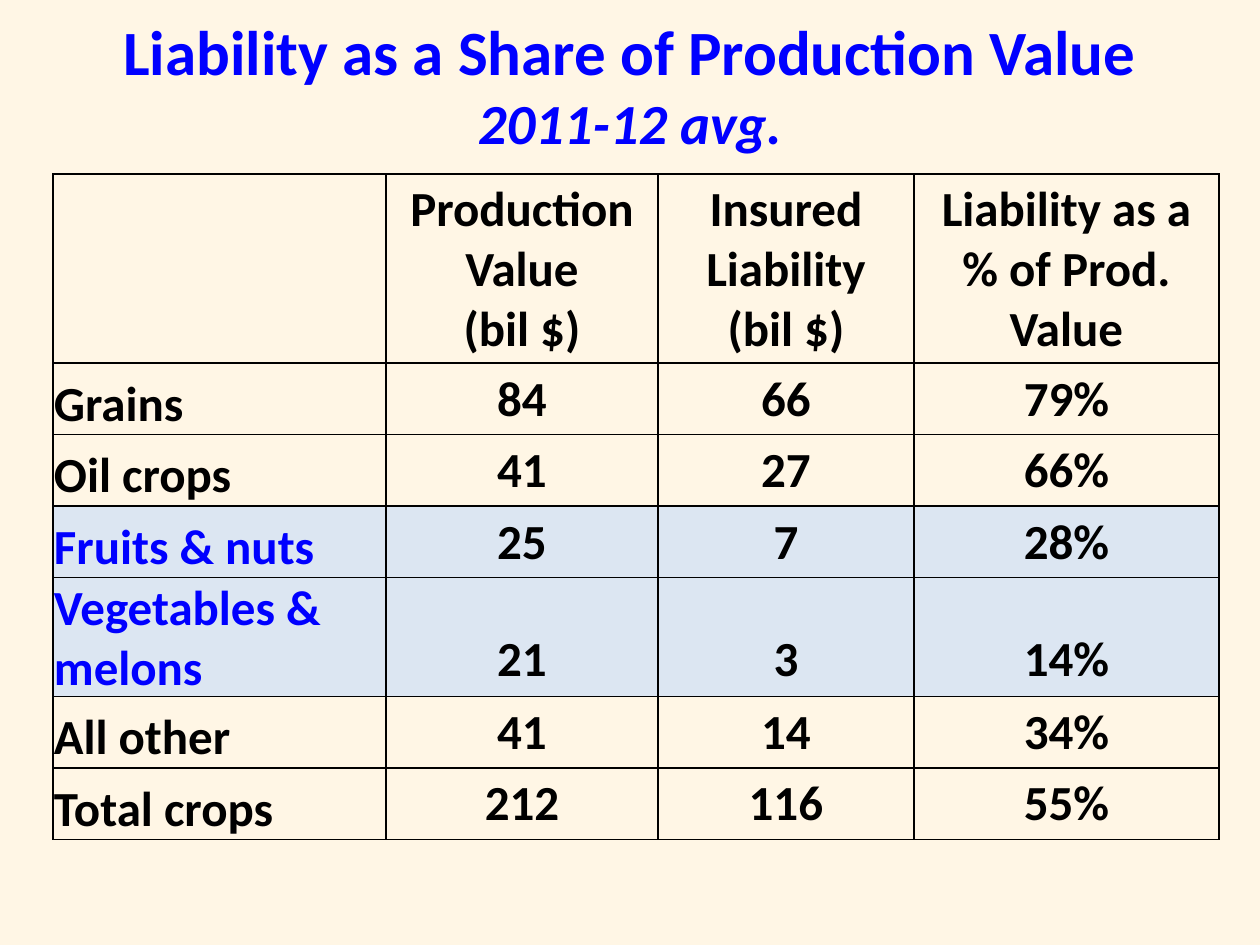
from pptx import Presentation
from pptx import util as u
from pptx.dml.color import RGBColor
from pptx.enum import text
from pptx.oxml import parse_xml
from pptx.oxml.ns import nsdecls

BLUE = RGBColor(0x00, 0x00, 0xFF)
BLACK = RGBColor(0x00, 0x00, 0x00)
CREAM = RGBColor(0xFF, 0xF6, 0xE5)
PALE_BLUE = RGBColor(0xDC, 0xE6, 0xF2)

COLUMNS = [333, 272, 256, 305]
HEADER_HEIGHT, ROW_HEIGHT, TALL_HEIGHT = 164, 63, 102
HEADER = ["", "Production Value\n(bil $)", "Insured\nLiability (bil $)",
          "Liability as a % of Prod. Value"]
CROPS = [
    ["Grains", "84", "66", "79%"],
    ["Oil crops", "41", "27", "66%"],
    ["Fruits & nuts", "25", "7", "28%"],
    ["Vegetables & melons", "21", "3", "14%"],
    ["All other", "41", "14", "34%"],
    ["Total crops", "212", "116", "55%"],
]
HIGHLIGHTED = {"Fruits & nuts", "Vegetables & melons"}
TALL = {"Vegetables & melons"}


def px(n):
    return u.Emu(round(n * 914400 / 126))


def add_run(p, words, color, **font):
    r = p.add_run()
    r.text = words
    r.font.color.rgb = color
    for name, value in {"name": "Calibri", "bold": True, **font}.items():
        setattr(r.font, name, value)


def add_title(s):
    tf = s.shapes.add_textbox(px(63), px(21), px(1134), px(126)).text_frame
    tf.word_wrap = True
    tf.vertical_anchor = text.MSO_ANCHOR.MIDDLE
    p = tf.paragraphs[0]
    p.alignment = text.PP_ALIGN.CENTER
    add_run(p, "Liability as a Share of Production Value ", BLUE, size=u.Pt(36))
    add_run(p, "2011-12 avg.", BLUE, size=u.Pt(32.4), italic=True)


def set_borders(cell):
    # Borders come before the fill in the cell properties
    tc_pr = cell._tc.get_or_add_tcPr()
    for i, side in enumerate(("lnL", "lnR", "lnT", "lnB")):
        tc_pr.insert(i, parse_xml(
            f'<a:{side} {nsdecls("a")} w="12700"><a:solidFill>'
            f'<a:srgbClr val="{BLACK}"/></a:solidFill></a:{side}>'))


def fill_cell(cell, words, is_label, highlighted):
    cell.vertical_anchor = text.MSO_ANCHOR.BOTTOM
    if is_label:
        margins = {"margin_left": 1, "margin_right": 1,
                   "margin_top": 1, "margin_bottom": 0}
        for name, value in margins.items():
            setattr(cell, name, px(value))
    if highlighted:
        cell.fill.solid()
        cell.fill.fore_color.rgb = PALE_BLUE
    else:
        cell.fill.background()
    set_borders(cell)
    if not words:
        return
    tf = cell.text_frame
    for i, line in enumerate(words.split("\n")):
        p = tf.add_paragraph() if i else tf.paragraphs[0]
        p.alignment = text.PP_ALIGN.LEFT if is_label else text.PP_ALIGN.CENTER
        color = BLUE if is_label and highlighted else BLACK
        add_run(p, line, color, size=u.Pt(28))


def add_crop_table(s):
    rows = [HEADER] + CROPS
    heights = [HEADER_HEIGHT] + [
        TALL_HEIGHT if crop[0] in TALL else ROW_HEIGHT for crop in CROPS]
    table = s.shapes.add_table(len(rows), len(COLUMNS), px(53), px(174),
                               px(sum(COLUMNS)), px(sum(heights))).table
    table.first_row = table.horz_banding = False
    for column, width in zip(table.columns, COLUMNS):
        column.width = px(width)
    for i, (row, height) in enumerate(zip(rows, heights)):
        table.rows[i].height = px(height)
        for j, words in enumerate(row):
            fill_cell(table.cell(i, j), words, i > 0 and j == 0,
                      row[0] in HIGHLIGHTED)


def main():
    prs = Presentation()
    prs.slide_width, prs.slide_height = px(1260), px(945)
    s = prs.slides.add_slide(prs.slide_layouts[6])
    # Background
    s.background.fill.solid()
    s.background.fill.fore_color.rgb = CREAM
    # Content
    add_title(s)
    add_crop_table(s)
    prs.save("out.pptx")


if __name__ == "__main__":
    main()
